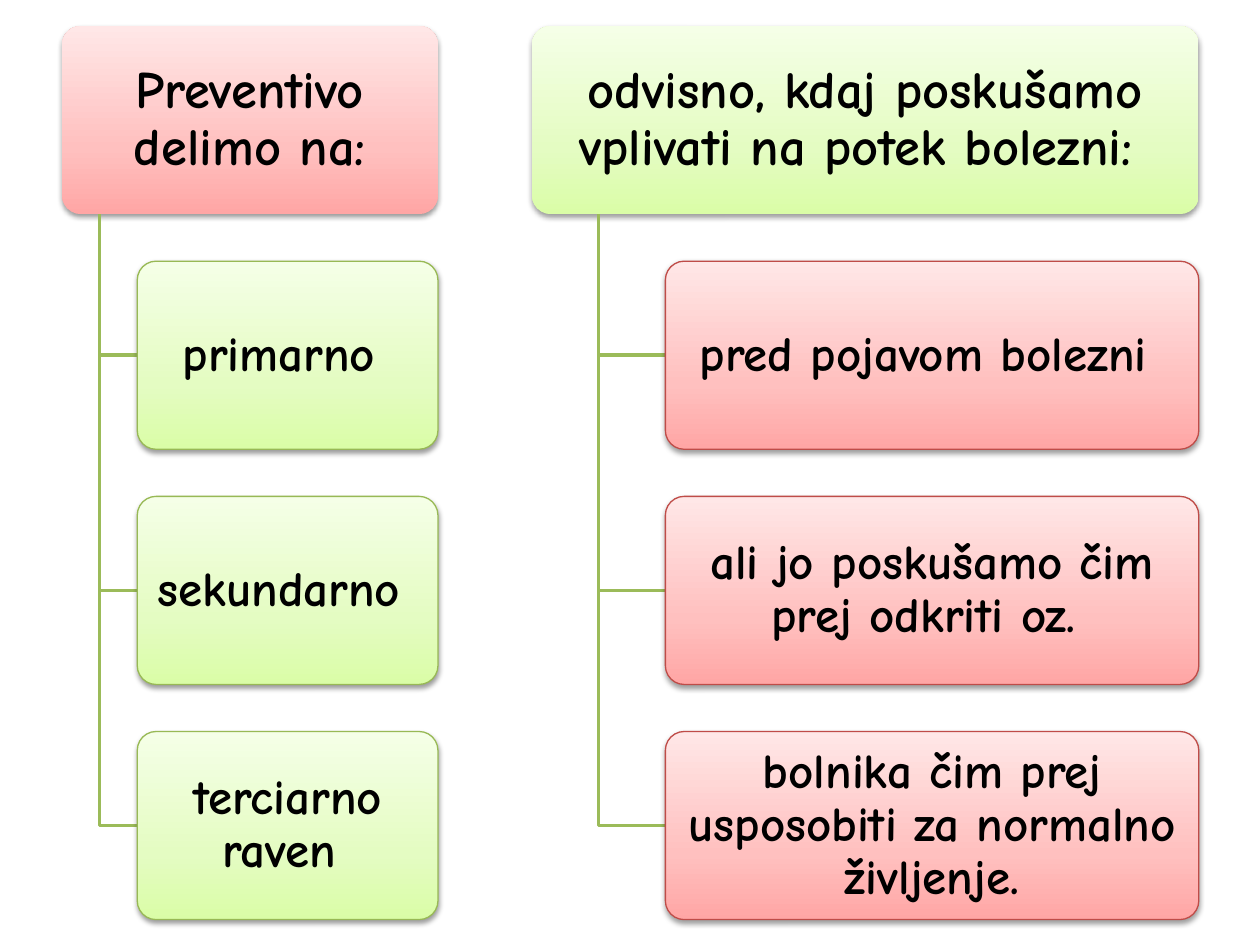
from dataclasses import dataclass

import pptx
import pptx.dml.color
import pptx.enum.shapes
import pptx.enum.text
import pptx.oxml
import pptx.oxml.ns
import pptx.util
from pptx.util import Pt

COLORS = {
    "text": "000000",
    "branch": "9BBB59",
    "red_line": "BF4C48",
    "green_line": "98B955",
    "shadow": "000000",
}
GRADIENTS = {
    "red": {0: "FFA6A5", 35: "FFC0BF", 100: "FFE7E7"},
    "green": {0: "DAFDA7", 35: "E4FCC2", 100: "F5FFE7"},
}
FONT = "Comic Neue"
TOP = 14.9
BOX_HEIGHT = 107.5
ROW_STEP = BOX_HEIGHT * 1.25
INDENT_SHARE = 0.1


@dataclass
class Tree:
    left: float
    width: float
    header: str
    header_tone: str
    items: list[str]
    item_tone: str


TREES = [
    Tree(35.5, 214.8, "Preventivo delimo na:", "red",
         ["primarno ", "sekundarno ", "terciarno raven "], "green"),
    Tree(304, 381, "odvisno, kdaj poskušamo vplivati na potek bolezni: ", "green",
         ["pred pojavom bolezni ",
          "ali jo poskušamo čim prej odkriti oz. ",
          "bolnika čim prej usposobiti za normalno življenje."], "red"),
]


def rgb(name: str) -> pptx.dml.color.RGBColor:
    return pptx.dml.color.RGBColor.from_string(COLORS[name])


def fill_gradient(shape, tone: str) -> None:
    """Fill from the bottom edge upwards with the stops of a tone."""
    shape.fill.gradient()
    shape.fill.gradient_angle = 90
    stops = shape.element.spPr.find(".//" + pptx.oxml.ns.qn("a:gsLst"))
    for stop in list(stops):
        stops.remove(stop)
    for position, color in GRADIENTS[tone].items():
        stops.append(pptx.oxml.parse_xml(
            f'<a:gs {pptx.oxml.ns.nsdecls("a")} pos="{position * 1000}">'
            f'<a:srgbClr val="{color}"/></a:gs>'))


def add_shadow(shape) -> None:
    shape.shadow.inherit = False
    effects = shape.element.spPr.find(pptx.oxml.ns.qn("a:effectLst"))
    effects.append(pptx.oxml.parse_xml(
        f'<a:outerShdw {pptx.oxml.ns.nsdecls("a")} blurRad="{Pt(3.1)}" '
        f'dist="{Pt(1.6)}" dir="5400000" rotWithShape="0">'
        f'<a:srgbClr val="{COLORS["shadow"]}"><a:alpha val="38000"/></a:srgbClr>'
        '</a:outerShdw>'))


def add_box(slide, left: float, top: float, width: float, text: str,
            tone: str, size: float, outlined: bool) -> None:
    shape = slide.shapes.add_shape(
        pptx.enum.shapes.MSO_SHAPE.ROUNDED_RECTANGLE,
        Pt(left), Pt(top), Pt(width), Pt(BOX_HEIGHT))
    shape.adjustments[0] = 0.1
    fill_gradient(shape, tone)
    if outlined:
        shape.line.color.rgb = rgb(tone + "_line")
        shape.line.width = Pt(0.75)
    else:
        shape.line.fill.background()
    add_shadow(shape)

    frame = shape.text_frame
    frame.text = text
    frame.word_wrap = True
    frame.vertical_anchor = pptx.enum.text.MSO_ANCHOR.MIDDLE
    frame.margin_left = frame.margin_right = Pt(7.4)
    frame.margin_top = frame.margin_bottom = Pt(6)
    paragraph = frame.paragraphs[0]
    paragraph.alignment = pptx.enum.text.PP_ALIGN.CENTER
    paragraph.line_spacing = 0.9
    font = paragraph.runs[0].font
    font.name = FONT
    font.size = Pt(size)
    font.bold = True
    font.color.rgb = rgb("text")


def add_branch(slide, trunk: float, top: float, right: float, bottom: float) -> None:
    """Draw an elbow down the trunk and across to an item."""
    builder = slide.shapes.build_freeform(Pt(trunk), Pt(top))
    builder.add_line_segments(
        [(Pt(trunk), Pt(bottom)), (Pt(right), Pt(bottom))], close=False)
    shape = builder.convert_to_shape()
    shape.fill.background()
    shape.line.color.rgb = rgb("branch")
    shape.line.width = Pt(2)
    shape.shadow.inherit = False


def add_tree(slide, tree: Tree) -> None:
    indent = tree.width * INDENT_SHARE
    trunk = tree.left + indent
    item_left = trunk + indent
    add_box(slide, tree.left, TOP, tree.width, tree.header,
            tree.header_tone, 30, outlined=False)
    for row, text in enumerate(tree.items, start=1):
        top = TOP + row * ROW_STEP
        add_branch(slide, trunk, TOP + BOX_HEIGHT, item_left, top + BOX_HEIGHT / 2)
        add_box(slide, item_left, top, tree.width - 2 * indent, text,
                tree.item_tone, 28, outlined=True)


def main() -> None:
    presentation = pptx.Presentation()
    presentation.slide_width = Pt(720)
    presentation.slide_height = Pt(540)
    slide = presentation.slides.add_slide(presentation.slide_layouts[6])
    for tree in TREES:
        add_tree(slide, tree)
    presentation.save("out.pptx")


if __name__ == "__main__":
    main()
